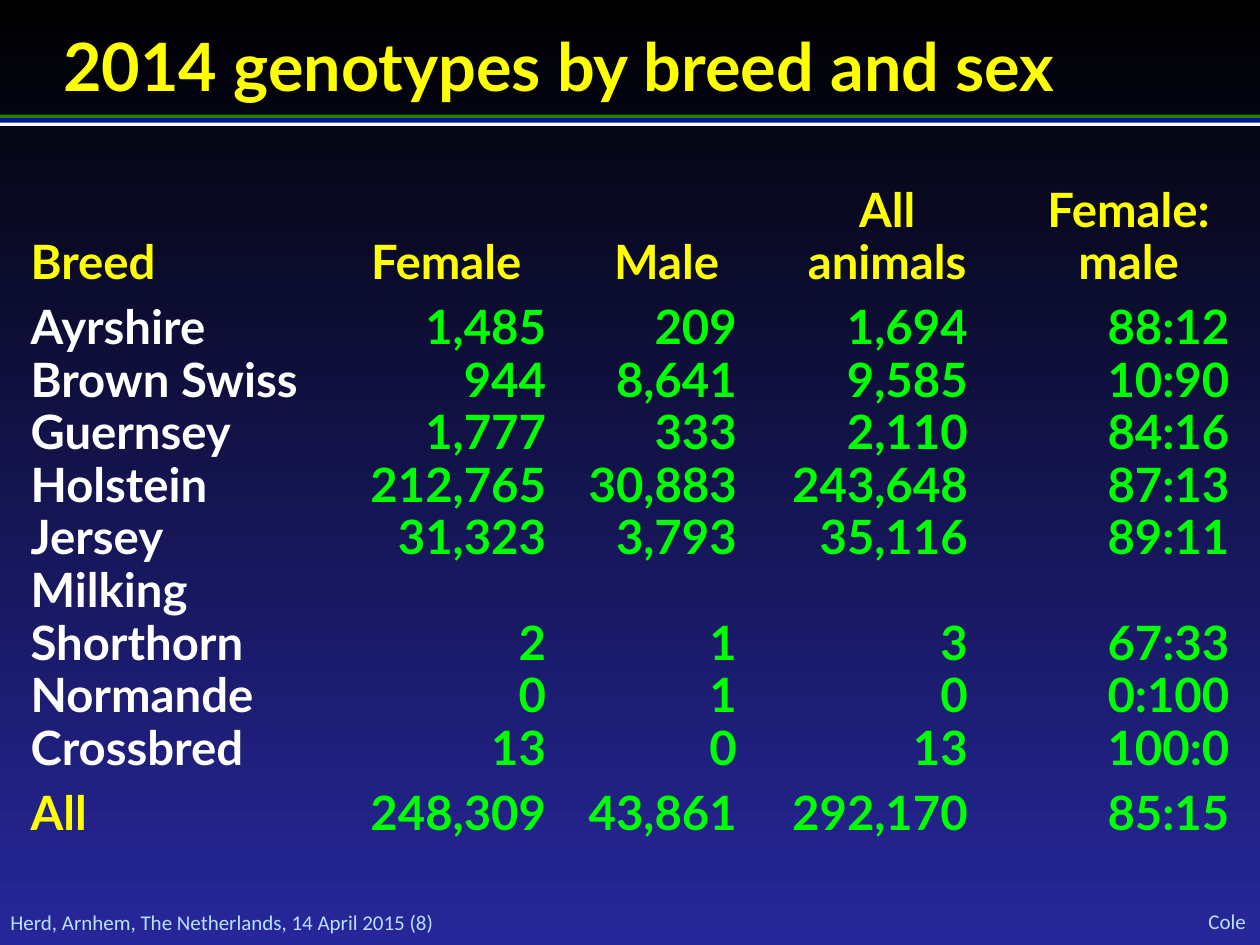
from dataclasses import dataclass
from pptx import Presentation
from pptx.dml.color import RGBColor
from pptx.enum.shapes import MSO_SHAPE
from pptx.enum.text import MSO_ANCHOR, MSO_AUTO_SIZE, PP_ALIGN
from pptx.util import Pt

LEFT, MID, RIGHT = PP_ALIGN.LEFT, PP_ALIGN.CENTER, PP_ALIGN.RIGHT
TOP, CENTRE, BOTTOM = MSO_ANCHOR.TOP, MSO_ANCHOR.MIDDLE, MSO_ANCHOR.BOTTOM
RECT = MSO_SHAPE.RECTANGLE
FIT = MSO_AUTO_SIZE.SHAPE_TO_FIT_TEXT
PLAIN = "{2D5ABB26-0587-4C30-8999-92F81FD0307C}"


@dataclass(frozen=True)
class Theme:
    night: str = "000000"
    navy: str = "27279B"
    yellow: str = "FFFF00"
    white: str = "FFFFFF"
    lime: str = "00FF00"
    green: str = "2A7E00"
    blue: str = "001799"
    pale: str = "B8E2FF"
    head: str = "Lato"
    note: str = "Calibri"
    big: int = 38
    body: int = 27
    small: int = 12
    line: int = 30


theme = Theme()


def write(frame, text, font=theme.head, size=theme.body, color=theme.white,
          bold=True, align=LEFT, line=None):
    frame.word_wrap = True
    frame.text = text
    for para in frame.paragraphs:
        para.alignment = align
        if line:
            para.line_spacing = Pt(line)
        for run in para.runs:
            run.font.name = font
            run.font.size = Pt(size)
            run.font.bold = bold
            run.font.color.rgb = RGBColor.from_string(color)


def inset(box, left, top, right, bottom):
    box.margin_left, box.margin_top = Pt(left), Pt(top)
    box.margin_right, box.margin_bottom = Pt(right), Pt(bottom)


deck = Presentation()
deck.slide_width, deck.slide_height = Pt(720), Pt(540)
slide = deck.slides.add_slide(deck.slide_layouts[5])

back = slide.background.fill
back.gradient()
back.gradient_angle = 270
for stop, place, color in zip(back.gradient_stops, (0, 1), (theme.night, theme.navy)):
    stop.position = place
    stop.color.rgb = RGBColor.from_string(color)

for text, x, y, w, h, align in [
    ("Herd, Arnhem, The Netherlands, 14 April 2015 (8)", 6, 519.8, 612, 14.6, LEFT),
    ("Cole", 631.5, 519.2, 80.5, 14.6, RIGHT),
]:
    frame = slide.shapes.add_textbox(Pt(x), Pt(y), Pt(w), Pt(h)).text_frame
    inset(frame, 0, 0, 0, 0)
    frame.vertical_anchor = CENTRE
    write(frame, text, font=theme.note, size=theme.small, color=theme.pale,
          bold=False, align=align)
    frame.auto_size = FIT

for y, h, color in [(65.5, 2.2, theme.green), (69.8, 2.2, theme.white),
                    (67.5, 2.6, theme.blue)]:
    band = slide.shapes.add_shape(RECT, 0, Pt(y), Pt(720), Pt(h))
    band.shadow.inherit = False
    band.fill.solid()
    band.fill.fore_color.rgb = RGBColor.from_string(color)
    band.line.fill.background()

title = slide.shapes.title
title.left, title.top, title.width, title.height = Pt(36), Pt(14.4), Pt(648), Pt(46)
inset(title.text_frame, 0, 0, 0, 0)
title.text_frame.vertical_anchor = TOP
write(title.text_frame, "2014 genotypes by breed and sex", size=theme.big,
      color=theme.yellow)
title.text_frame.auto_size = FIT

rows = [
    ("Breed", "Female", "Male", "All\nanimals", "Female:\nmale"),
    ("Ayrshire", "1,485", "209", "1,694", "88:12"),
    ("Brown Swiss", "944", "8,641", "9,585", "10:90"),
    ("Guernsey", "1,777", "333", "2,110", "84:16"),
    ("Holstein", "212,765", "30,883", "243,648", "87:13"),
    ("Jersey", "31,323", "3,793", "35,116", "89:11"),
    ("Milking Shorthorn", "2", "1", "3", "67:33"),
    ("Normande", "0", "1", "0", "0:100"),
    ("Crossbred", "13", "0", "13", "100:0"),
    ("All", "248,309", "43,861", "292,170", "85:15"),
]
widths = [186, 114, 120, 150, 126]
pads = [(5.5, 5.5), (0, 0), (0, 11), (0, 29), (5.5, 5.5)]
heads = [(5.5, 5.5), (0, 0), (18, 0), (0, 0), (5.5, 5.5)]
last = len(rows) - 1
gaps = {1: 7.2, last: 7.2}
tall = (0, 6)
highs = [theme.line * (2 if r in tall else 1) + gaps.get(r, 0)
         for r in range(len(rows))]

table = slide.shapes.add_table(len(rows), len(widths), Pt(12), Pt(105.6),
                               Pt(sum(widths)), Pt(sum(highs))).table
table.first_row = table.horz_banding = False
table._tbl.tblPr[0].text = PLAIN
for col, width in zip(table.columns, widths):
    col.width = Pt(width)

for r, row in enumerate(rows):
    table.rows[r].height = Pt(highs[r])
    for c, text in enumerate(row):
        cell = table.cell(r, c)
        cell.fill.background()
        cell.vertical_anchor = BOTTOM
        left, right = (pads if r else heads)[c]
        inset(cell, left, gaps.get(r, 0), right, 0)
        if r == 0 or (r == last and c == 0):
            color = theme.yellow
        else:
            color = theme.lime if c else theme.white
        align = LEFT if c == 0 else RIGHT if r else MID
        write(cell.text_frame, text, color=color, align=align, line=theme.line)

deck.save("out.pptx")
